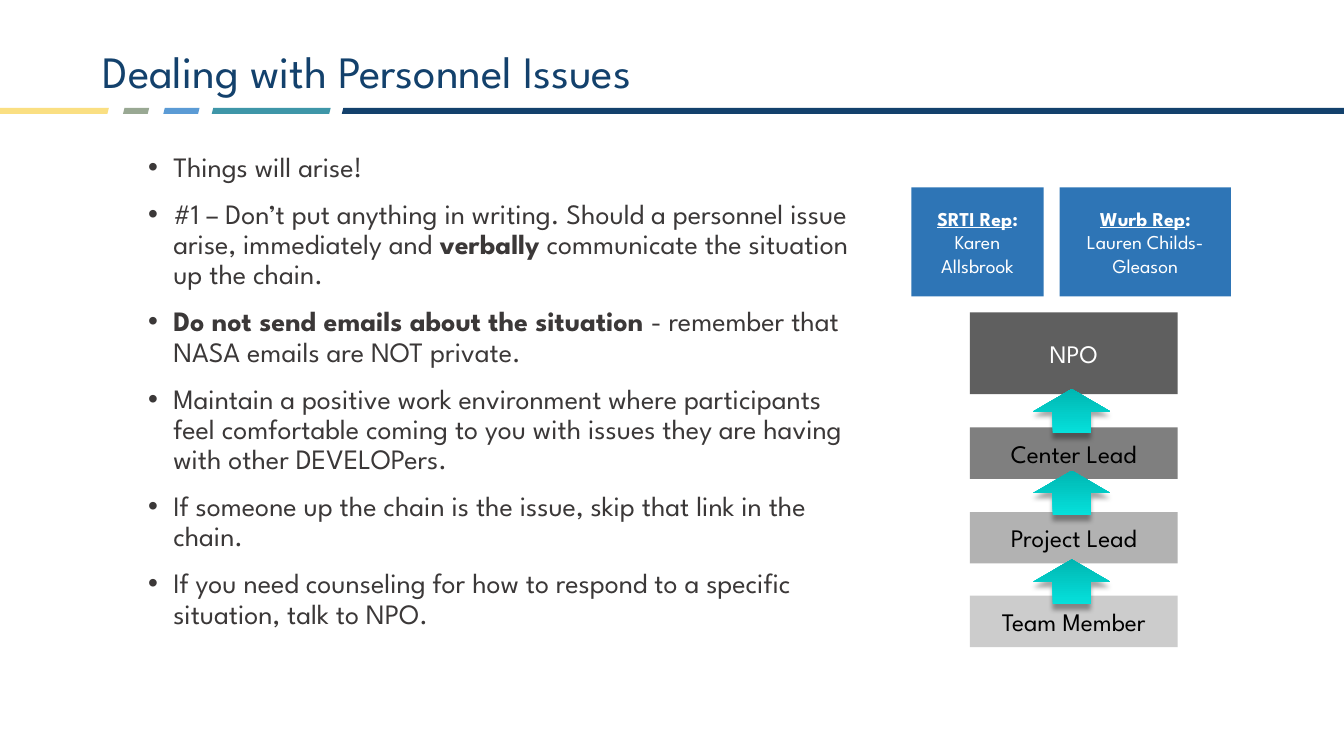
from dataclasses import dataclass
from typing import NamedTuple

from lxml.etree import SubElement
from pptx import Presentation
from pptx.dml.color import RGBColor
from pptx.enum.shapes import MSO_SHAPE as Shape
from pptx.enum.text import MSO_ANCHOR as Anchor, PP_ALIGN as Align
from pptx.oxml.ns import qn
from pptx.util import Inches, Pt


@dataclass(frozen=True)
class Theme:
    """Colours, font and type sizes of the slide."""
    font: str = "League Spartan"
    navy: str = "13416C"
    ink: str = "3B3838"
    white: str = "FFFFFF"
    black: str = "000000"
    rep: str = "2E75B6"
    arrow_start: str = "05E0DB"
    arrow_end: str = "00B6B2"
    title_size: int = 32
    body_size: int = 20
    level_size: int = 18
    rep_size: int = 14


class Run(NamedTuple):
    """A stretch of text with one format."""
    text: str
    bold: bool = False
    underline: bool = False


class Bar(NamedTuple):
    """One slanted piece of the title rule."""
    left: float
    width: float
    color: str


class Box(NamedTuple):
    """A filled rectangle with centred paragraphs."""
    left: float
    top: float
    width: float
    height: float
    fill: str
    color: str
    size: int
    paragraphs: list[list[Run]]


T = Theme()

BARS = [
    Bar(-0.04, 1.12, "FADF82"),
    Bar(1.22, 0.26, "99A893"),
    Bar(1.62, 0.36, "5B9BD5"),
    Bar(2.1, 1.18, "3E96A8"),
    Bar(3.39, 9.98, T.navy),
]

BULLETS = [
    [Run("Things will arise!")],
    [Run("#1 – Don’t put anything in writing. Should a personnel issue arise, immediately and "),
     Run("verbally", bold=True),
     Run(" communicate the situation up the chain.")],
    [Run("Do not send emails about the situation", bold=True),
     Run(" - remember that NASA emails are NOT private.")],
    [Run("Maintain a positive work environment where participants feel comfortable "
         "coming to you with issues they are having with other DEVELOPers.")],
    [Run("If someone up the chain is the issue, skip that link in the chain.")],
    [Run("If you need counseling for how to respond to a specific situation, talk to NPO.")],
]

REPS = [
    Box(9.04, 1.86, 1.31, 1.08, T.rep, T.white, T.rep_size,
        [[Run("SRTI Rep", True, True), Run(": ", True), Run("Karen Allsbrook")]]),
    Box(10.51, 1.86, 1.7, 1.08, T.rep, T.white, T.rep_size,
        [[Run("Wurb Rep", True, True), Run(":", True)], [Run("Lauren Childs-Gleason")]]),
]

LEVELS = [
    Box(9.62, top, 2.06, height, fill, color, T.level_size, [[Run(name)]])
    for name, top, height, fill, color in [
        ("NPO", 3.1, 0.81, "5F5F5F", T.white),
        ("Center Lead", 4.24, 0.51, "7F7F7F", T.black),
        ("Project Lead", 5.08, 0.51, "B2B2B2", T.black),
        ("Team Member", 5.91, 0.51, "CCCCCC", T.black),
    ]
]

ARROW_TOPS = [5.55, 4.67, 3.86]


def add_text(p, text: str, *, size: int, color: str, bold: bool = False,
             underline: bool = False) -> None:
    """Append a formatted run to a paragraph."""
    r = p.add_run()
    r.text = text
    r.font.name = T.font
    r.font.size = Pt(size)
    r.font.color.rgb = RGBColor.from_string(color)
    r.font.bold = bold
    r.font.underline = underline


def fill_frame(tf, paragraphs: list[list[Run]], *, size: int, color: str) -> list:
    """Write paragraphs of runs into a text frame and return them."""
    tf.word_wrap = True
    for i, runs in enumerate(paragraphs):
        p = tf.paragraphs[0] if i == 0 else tf.add_paragraph()
        for run in runs:
            add_text(p, run.text, size=size, color=color,
                     bold=run.bold, underline=run.underline)
    return list(tf.paragraphs)


def add_solid(s, kind: Shape, left: float, top: float, width: float,
              height: float, fill: str):
    """Add a flat preset shape without outline or shadow."""
    sp = s.shapes.add_shape(kind, Inches(left), Inches(top), Inches(width), Inches(height))
    sp.shadow.inherit = False
    sp.fill.solid()
    sp.fill.fore_color.rgb = RGBColor.from_string(fill)
    sp.line.fill.background()
    return sp


def add_box(s, box: Box) -> None:
    """Add a labelled rectangle."""
    sp = add_solid(s, Shape.RECTANGLE, box.left, box.top, box.width, box.height, box.fill)
    tf = sp.text_frame
    tf.vertical_anchor = Anchor.MIDDLE
    tf.margin_left = tf.margin_right = Inches(0.09)
    tf.margin_top = tf.margin_bottom = Inches(0.04)
    for p in fill_frame(tf, box.paragraphs, size=box.size, color=box.color):
        p.alignment = Align.CENTER


def add_arrow(s, top: float) -> None:
    """Add an upward gradient arrow with a soft shadow."""
    sp = add_solid(s, Shape.DOWN_ARROW, 10.25, top, 0.76, 0.44, T.arrow_start)
    sp.rotation = 180
    sp.fill.gradient()
    sp.fill.gradient_angle = 270
    for stop, color in zip(sp.fill.gradient_stops, (T.arrow_start, T.arrow_end)):
        stop.color.rgb = RGBColor.from_string(color)
    effects = sp.element.spPr.find(qn("a:effectLst"))
    shadow = SubElement(effects, qn("a:outerShdw"), blurRad=str(Pt(3.5)),
                        dist=str(Pt(4)), dir="5400000", rotWithShape="0")
    color = SubElement(shadow, qn("a:srgbClr"), val=T.black)
    SubElement(color, qn("a:alpha"), val="34000")


def add_title(s, title: str) -> None:
    """Add the slide title."""
    tf = s.shapes.add_textbox(Inches(0.92), Inches(0.4), Inches(11.5), Inches(0.67)).text_frame
    tf.vertical_anchor = Anchor.MIDDLE
    p, = fill_frame(tf, [[Run(title)]], size=T.title_size, color=T.navy)
    p.line_spacing = 0.9


def add_bullets(s, bullets: list[list[Run]]) -> None:
    """Add the bulleted advice."""
    tf = s.shapes.add_textbox(Inches(1.37), Inches(1.47), Inches(7.25), Inches(5.25)).text_frame
    for i, p in enumerate(fill_frame(tf, bullets, size=T.body_size, color=T.ink)):
        pPr = p._p.get_or_add_pPr()
        pPr.set("marL", str(Inches(0.25)))
        pPr.set("indent", str(Inches(-0.25)))
        SubElement(pPr, qn("a:buFont"), typeface="Arial")
        SubElement(pPr, qn("a:buChar"), char="•")
        p.line_spacing = 0.9
        p.space_before = Pt(12 if i else 0)


def main() -> None:
    """Build and save the slide."""
    prs = Presentation()
    prs.slide_width, prs.slide_height = Inches(13.33), Inches(7.5)
    s = prs.slides.add_slide(prs.slide_layouts[6])
    for bar in BARS:
        add_solid(s, Shape.PARALLELOGRAM, bar.left, 1.07, bar.width, 0.06, bar.color)
    add_title(s, "Dealing with Personnel Issues")
    add_bullets(s, BULLETS)
    for box in REPS + LEVELS:
        add_box(s, box)
    for top in ARROW_TOPS:
        add_arrow(s, top)
    prs.save("out.pptx")


if __name__ == "__main__":
    main()
